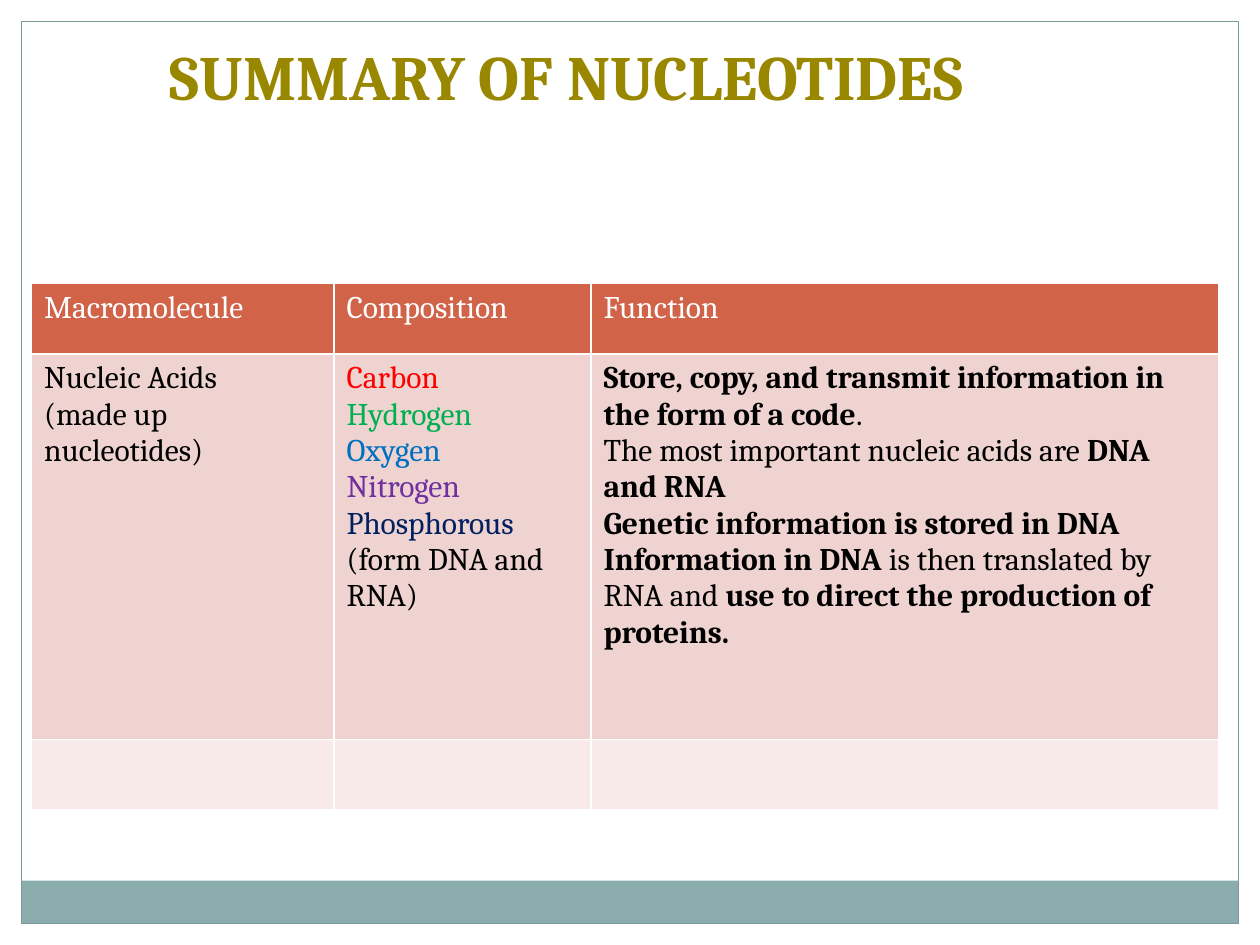
from pptx import Presentation
from pptx import util as u
from pptx.dml import color
from pptx.enum import shapes, text

FACE = "Cambria"
WHITE, BLACK = "FFFFFF", "000000"
HEAD, BODY, PALE = "D16349", "EED3D0", "F7EAE9"

# A paragraph is a list of runs: (words, colour, bold)
HEADS = [[[(word, WHITE, False)]]
         for word in ("Macromolecule", "Composition", "Function")]
ACIDS = [[(line, BLACK, False)]
         for line in ("Nucleic Acids", "(made up nucleotides)")]
PARTS = [[(line, tone, False)] for line, tone in (
    ("Carbon", "FF0000"), ("Hydrogen", "00B050"), ("Oxygen", "0070C0"),
    ("Nitrogen", "7030A0"), ("Phosphorous", "002060"),
    ("(form DNA and RNA)", BLACK))]
ROLES = [
    [("Store, copy, and transmit information in the form of a code", BLACK, True),
     (".", BLACK, False)],
    [("The most important nucleic acids are ", BLACK, False),
     ("DNA and RNA", BLACK, True)],
    [("Genetic information is stored in DNA", BLACK, True)],
    [("Information in DNA ", BLACK, True),
     ("is then translated by RNA and ", BLACK, False),
     ("use to direct the production of proteins.", BLACK, True)],
]
ROWS = [(0.56, HEAD, HEADS), (3.06, BODY, [ACIDS, PARTS, ROLES]),
        (0.56, PALE, [[], [], []])]
COLS = [2.4, 2.04, 4.98]


def rgb(tone):
    return color.RGBColor.from_string(tone)


def inches(box):
    return [u.Inches(n) for n in box]


def write(frame, paras, size):
    for i, runs in enumerate(paras):
        para = frame.add_paragraph() if i else frame.paragraphs[0]
        for words, tone, bold in runs:
            run = para.add_run()
            run.text = words
            look = {"name": FACE, "size": u.Pt(size), "bold": bold}
            for key, value in look.items():
                setattr(run.font, key, value)
            run.font.color.rgb = rgb(tone)


def add_block(slide, box, tone=None):
    """Add a rectangle without a line, filled if a colour is given."""
    block = slide.shapes.add_shape(shapes.MSO_SHAPE.RECTANGLE, *inches(box))
    block.shadow.inherit = False
    block.line.fill.background()
    if tone:
        block.fill.solid()
        block.fill.fore_color.rgb = rgb(tone)
    else:
        block.fill.background()
    return block


def add_frame(slide, box, edge, foot):
    """Draw white margins, a band along the lower side and an outline."""
    wide, high = box
    across, down = wide - 2 * edge, high - 2 * edge
    for margin in ((0, 0, wide, edge), (wide - edge, 0, edge, high),
                   (0, 0, edge, high)):
        add_block(slide, margin, WHITE)
    add_block(slide, (edge, high - edge - foot, across, foot), "8CADAE")
    rim = add_block(slide, (edge, edge, across, down))
    rim.line.color.rgb = rgb("7C999A")
    rim.line.width = u.Pt(0.75)


def add_grid(slide, box):
    grid = slide.shapes.add_table(len(ROWS), len(COLS), *inches(box)).table
    for col, wide in zip(grid.columns, COLS):
        col.width = u.Inches(wide)
    for r, (high, tone, cells) in enumerate(ROWS):
        grid.rows[r].height = u.Inches(high)
        for c, paras in enumerate(cells):
            cell = grid.cell(r, c)
            cell.fill.solid()
            cell.fill.fore_color.rgb = rgb(tone)
            write(cell.text_frame, paras, 18)


def add_title(slide, box):
    title = slide.shapes.title
    for key, value in zip(("left", "top", "width", "height"), inches(box)):
        setattr(title, key, value)
    frame = title.text_frame
    look = {"word_wrap": True, "vertical_anchor": text.MSO_ANCHOR.TOP,
            "auto_size": text.MSO_AUTO_SIZE.SHAPE_TO_FIT_TEXT}
    for key, value in look.items():
        setattr(frame, key, value)
    write(frame, [[("SUMMARY OF NUCLEOTIDES", "998700", True)]], 36)
    frame.paragraphs[0].alignment = text.PP_ALIGN.CENTER


def main():
    deck = Presentation()
    size = (10, 7.5)
    deck.slide_width, deck.slide_height = inches(size)
    slide = deck.slides.add_slide(deck.slide_layouts[5])
    add_frame(slide, size, 0.17, 0.34)
    add_grid(slide, (0.25, 2.25, sum(COLS), sum(row[0] for row in ROWS)))
    add_title(slide, (0.83, 0.25, 7.33, 0.71))
    deck.save("out.pptx")


if __name__ == "__main__":
    main()
